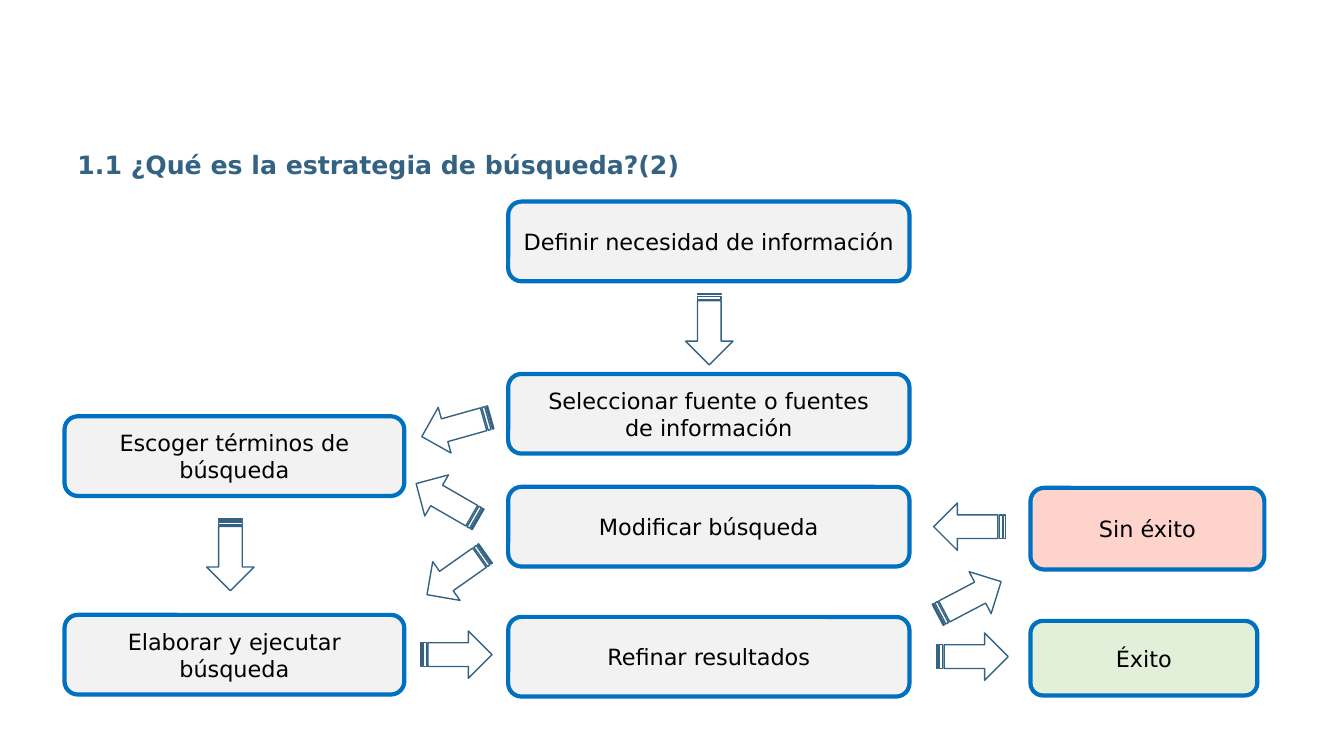
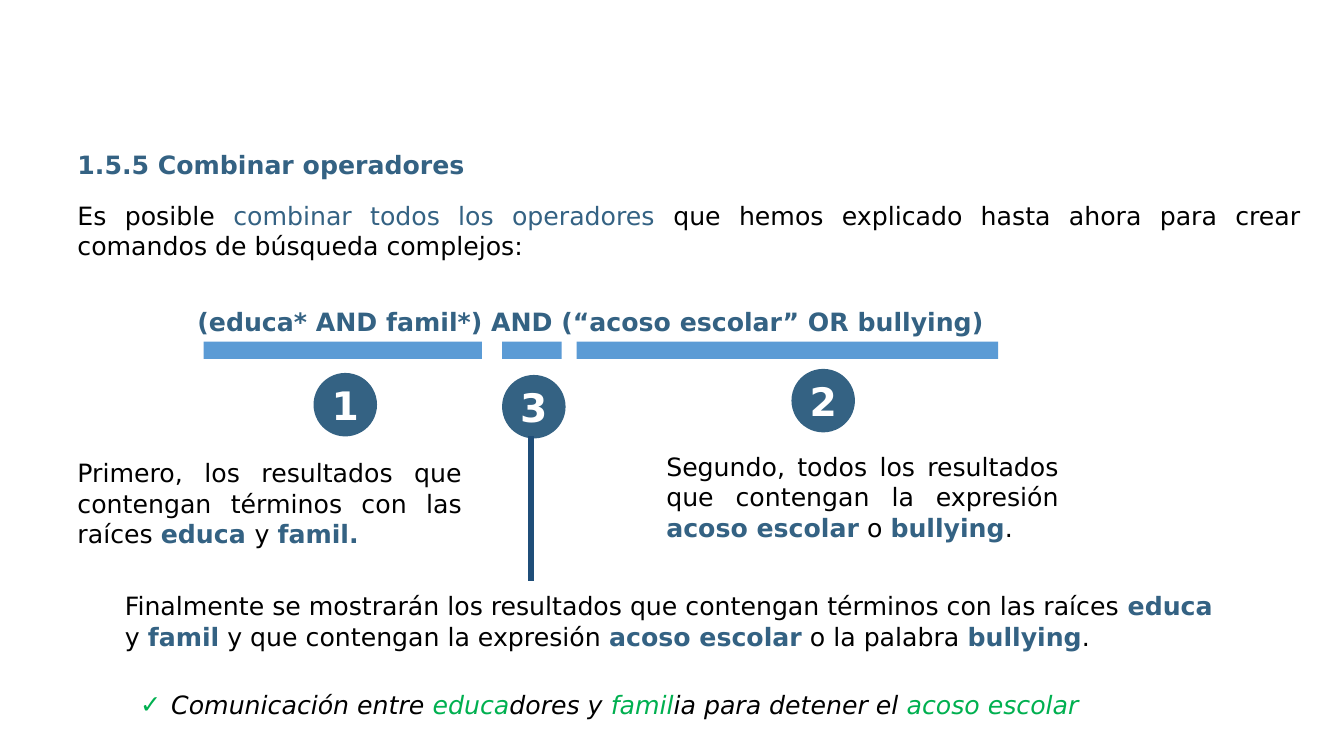
from lxml.etree import SubElement
from pptx import Presentation
from pptx.dml.color import RGBColor
from pptx.enum.shapes import MSO_CONNECTOR, MSO_SHAPE
from pptx.enum.text import MSO_ANCHOR, PP_ALIGN
from pptx.oxml.ns import qn
from pptx.util import Inches, Pt

FONT = "DejaVu Sans"
BLACK, WHITE = "000000", "FFFFFF"
TEAL, GREEN = "346283", "00B050"
BAR_BLUE, STEM_BLUE, BORDER_BLUE = "5B9BD5", "1F4E79", "0070C0"
STEP_GREY, FAIL_RED, SUCCESS_GREEN = "F2F2F2", "FED3CC", "E2F0D9"


def rgb(color):
    return RGBColor.from_string(color)


def set_font(font, size, color, bold=False, italic=False):
    font.name = FONT
    font.size = Pt(size)
    font.bold = bold
    font.italic = italic
    font.color.rgb = rgb(color)


# Shapes
def add_block(slide, kind, box, fill, border=None, width=0):
    block = slide.shapes.add_shape(kind, *map(Inches, box))
    block.shadow.inherit = False
    block.fill.solid()
    block.fill.fore_color.rgb = rgb(fill)
    if border:
        block.line.color.rgb = rgb(border)
        block.line.width = Pt(width)
    else:
        block.line.fill.background()
    return block


def label_block(block, text, size, color, bold=False):
    frame = block.text_frame
    frame.word_wrap = True
    frame.vertical_anchor = MSO_ANCHOR.MIDDLE
    frame.text = text
    for paragraph in frame.paragraphs:
        paragraph.alignment = PP_ALIGN.CENTER
        set_font(paragraph.font, size, color, bold)


def add_step(slide, text, box, fill=STEP_GREY):
    step = add_block(slide, MSO_SHAPE.ROUNDED_RECTANGLE, box, fill, BORDER_BLUE, 3)
    label_block(step, text, 16, BLACK)


def add_arrow(slide, left, top, rotation):
    arrow = add_block(slide, MSO_SHAPE.STRIPED_RIGHT_ARROW,
                      (left, top, 0.71, 0.47), WHITE, TEAL, 1)
    arrow.rotation = rotation


def add_number(slide, number, left, top):
    disc = add_block(slide, MSO_SHAPE.OVAL, (left, top, 0.63, 0.63), TEAL)
    frame = disc.text_frame
    frame.margin_left = frame.margin_right = 0
    frame.margin_top = frame.margin_bottom = 0
    label_block(disc, number, 28, WHITE, bold=True)


def add_stem(slide, x, top, bottom):
    stem = slide.shapes.add_connector(
        MSO_CONNECTOR.STRAIGHT, *map(Inches, (x, top, x, bottom)))
    stem.line.color.rgb = rgb(STEM_BLUE)
    stem.line.width = Pt(4.5)
    SubElement(stem._element.spPr, qn("a:effectLst"))


# Text
def add_check_bullet(paragraph):
    properties = paragraph._p.get_or_add_pPr()
    properties.set("marL", str(Inches(0.31)))
    properties.set("indent", str(-Inches(0.31)))
    bullet_color = SubElement(properties, qn("a:buClr"))
    SubElement(bullet_color, qn("a:srgbClr")).set("val", GREEN)
    SubElement(properties, qn("a:buFont")).set("typeface", FONT)
    SubElement(properties, qn("a:buChar")).set("char", "✓")


def add_text(slide, text, box, color=BLACK, bold=False, italic=False,
             align=PP_ALIGN.LEFT, accent=TEAL, accent_bold=True, check=False):
    """Write one paragraph; parts between bars take the accent style."""
    frame = slide.shapes.add_textbox(*map(Inches, box)).text_frame
    frame.word_wrap = True
    paragraph = frame.paragraphs[0]
    paragraph.alignment = align
    if check:
        add_check_bullet(paragraph)
    set_font(paragraph.font, 18, color, bold, italic)
    for index, part in enumerate(text.split("|")):
        if not part:
            continue
        run = paragraph.add_run()
        run.text = part
        if index % 2:
            run.font.color.rgb = rgb(accent)
            if accent_bold:
                run.font.bold = True


def add_titled_slide(deck, title):
    slide = deck.slides.add_slide(deck.slide_layouts[6])
    add_text(slide, title, (0.67, 1.43, 10.6, 0.4), TEAL, bold=True)
    return slide


# Slides
def build_strategy(deck):
    slide = add_titled_slide(deck, "1.1 ¿Qué es la estrategia de búsqueda?(2)")
    left_column, middle_column, right_column = 0.64, 5.04, 10.22
    left_width, middle_width, step_height = 3.37, 3.98, 0.79

    for text, top in (("Escoger términos de búsqueda", 4.13),
                      ("Elaborar y ejecutar búsqueda", 6.1)):
        add_step(slide, text, (left_column, top, left_width, step_height))
    for text, top in (("Definir necesidad de información", 2),
                      ("Seleccionar fuente o fuentes\nde información", 3.71),
                      ("Modificar búsqueda", 4.83),
                      ("Refinar resultados", 6.12)):
        add_step(slide, text, (middle_column, top, middle_width, step_height))
    add_step(slide, "Sin éxito", (right_column, 4.84, 2.32, 0.81), FAIL_RED)
    add_step(slide, "Éxito", (right_column, 6.16, 2.25, 0.74), SUCCESS_GREEN)

    for left, top, rotation in (
            (6.68, 3.03, 90), (4.17, 4, 164.3), (1.93, 5.27, 90),
            (4.17, 6.26, 0), (9.29, 6.28, 0), (9.26, 5.7, 332.3),
            (9.26, 4.99, 180), (4.17, 5.46, 144.8), (4.08, 4.74, 210)):
        add_arrow(slide, left, top, rotation)


def build_operators(deck):
    slide = add_titled_slide(deck, "1.5.5 Combinar operadores")
    add_text(slide, "Es posible |combinar todos los operadores |que hemos explicado "
             "hasta ahora para crear comandos de búsqueda complejos:",
             (0.67, 1.94, 12.33, 0.71), align=PP_ALIGN.JUSTIFY, accent_bold=False)

    # Search formula with its underlined, numbered parts
    add_text(slide, "(educa* AND famil*) AND (“acoso escolar” OR bullying)",
             (1.86, 2.99, 9.49, 0.4), TEAL, bold=True, align=PP_ALIGN.JUSTIFY)
    for left, width in ((2.02, 2.76), (4.98, 0.59), (5.72, 4.18)):
        add_block(slide, MSO_SHAPE.RECTANGLE, (left, 3.39, width, 0.17), BAR_BLUE)
    for number, left, top in (("1", 3.11, 3.7), ("2", 7.85, 3.66), ("3", 4.98, 3.72)):
        add_number(slide, number, left, top)
    add_stem(slide, 5.27, 4.33, 5.76)

    # Explanations
    add_text(slide, "Primero, los resultados que contengan términos con las raíces "
             "|educa |y |famil.", (0.67, 4.49, 4.01, 1.01), align=PP_ALIGN.JUSTIFY)
    add_text(slide, "Segundo, todos los resultados que contengan la expresión "
             "|acoso escolar| o |bullying|.", (6.51, 4.43, 4.09, 1.01),
             align=PP_ALIGN.JUSTIFY)
    add_text(slide, "Finalmente se mostrarán los resultados que contengan términos "
             "con las raíces |educa |y |famil| y que contengan la expresión "
             "|acoso escolar| o la palabra |bullying|.", (1.14, 5.81, 11.08, 0.71))
    add_text(slide, "Comunicación entre |educa|dores y |famil|ia para detener el "
             "|acoso escolar", (1.29, 6.79, 10.08, 0.4), italic=True,
             accent=GREEN, accent_bold=False, check=True)


def main():
    deck = Presentation()
    deck.slide_width, deck.slide_height = Inches(13.33), Inches(7.5)
    build_strategy(deck)
    build_operators(deck)
    deck.save("out.pptx")


if __name__ == "__main__":
    main()
